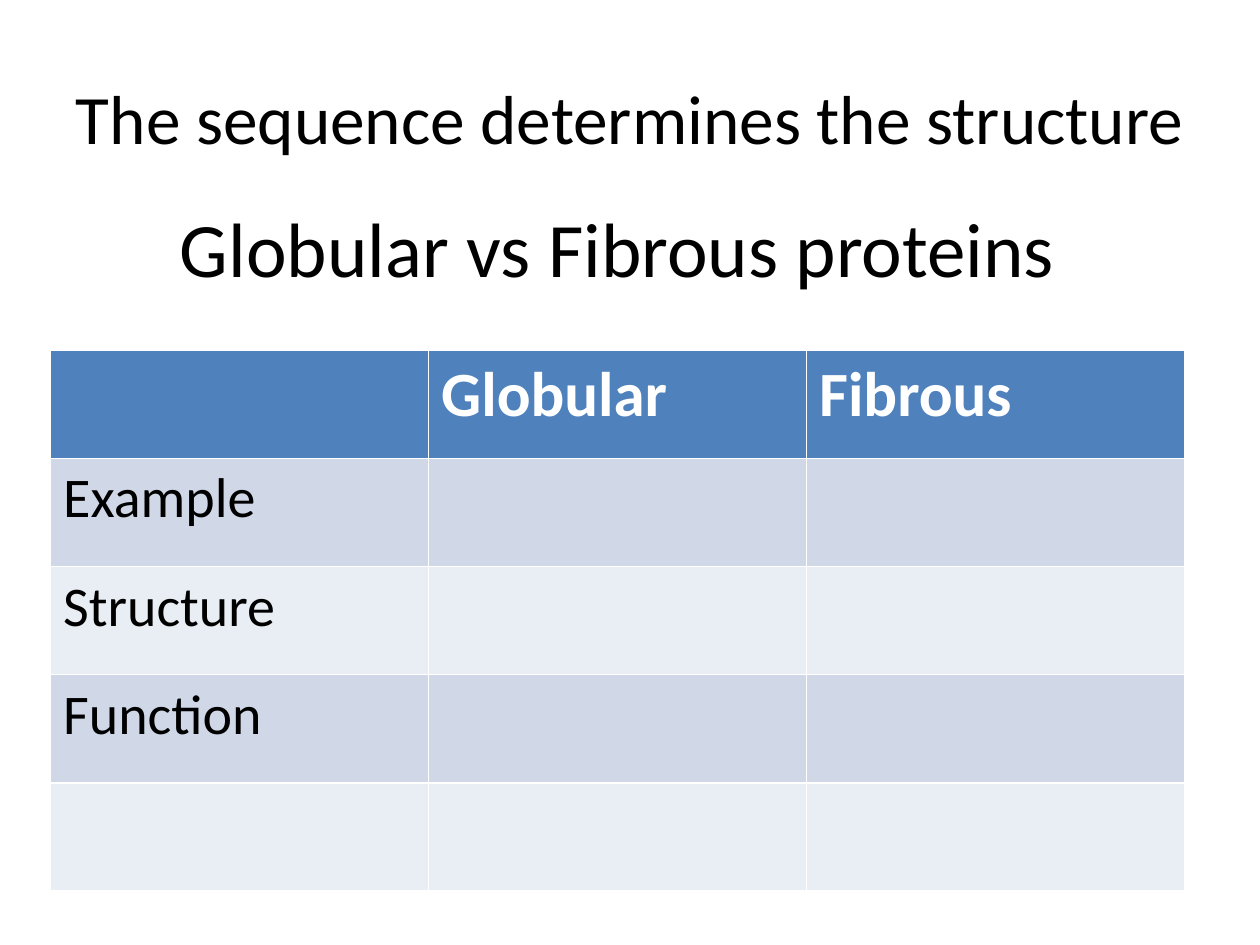
from pptx import Presentation
from pptx import util as u
from pptx.dml.color import RGBColor
from pptx.enum import text as t

HUES = {"head": "4F81BD", "odd": "D0D8E8", "even": "E9EDF4",
        "ink": "000000", "pale": "FFFFFF"}
ROWS = [["", "Globular", "Fibrous"],
        ["Example", "", ""],
        ["Structure", "", ""],
        ["Function", "", ""],
        ["", "", ""]]


def hue(name):
    """Return the named colour."""
    return RGBColor.from_string(HUES[name])


def style(para, size, ink="ink", bold=False):
    """Set the font of a paragraph."""
    font = para.font
    font.name, font.size, font.bold = "Calibri", u.Pt(size), bold
    font.color.rgb = hue(ink)


def add_line(shape, box, words, size):
    """Place one centred line of text in a box."""
    shape.left, shape.top, shape.width, shape.height = map(u.Cm, box)
    frame = shape.text_frame
    frame.text = words
    frame.word_wrap = True
    frame.auto_size = t.MSO_AUTO_SIZE.NONE
    frame.vertical_anchor = t.MSO_ANCHOR.MIDDLE
    para = frame.paragraphs[0]
    para.alignment = t.PP_ALIGN.CENTER
    style(para, size)


def add_grid(slide, box, rows):
    """Place the protein table with equal rows and columns in a box."""
    grid = slide.shapes.add_table(len(rows), len(rows[0]), *map(u.Cm, box)).table
    for r, row in enumerate(rows):
        fill = "head" if r == 0 else "odd" if r % 2 else "even"
        for c, words in enumerate(row):
            cell = grid.cell(r, c)
            cell.fill.solid()
            cell.fill.fore_color.rgb = hue(fill)
            if words:
                cell.text = words
                para = cell.text_frame.paragraphs[0]
                if r == 0:
                    style(para, 36, "pale", True)
                else:
                    style(para, 32)


def main():
    """Build the slide and save it."""
    deck = Presentation()
    deck.slide_width, deck.slide_height = u.Cm(25.4), u.Cm(19.05)
    slide = deck.slides.add_slide(deck.slide_layouts[5])
    add_line(slide.shapes.title, (1.02, 3.38, 22.86, 3.18),
             "Globular vs Fibrous proteins", 44)
    add_grid(slide, (1.02, 7.06, 22.86, 10.9), ROWS)
    box = (1.27, 0.76, 22.86, 3.18)
    add_line(slide.shapes.add_textbox(*map(u.Cm, box)), box,
             "The sequence determines the structure", 39.6)
    deck.save("out.pptx")


if __name__ == "__main__":
    main()
